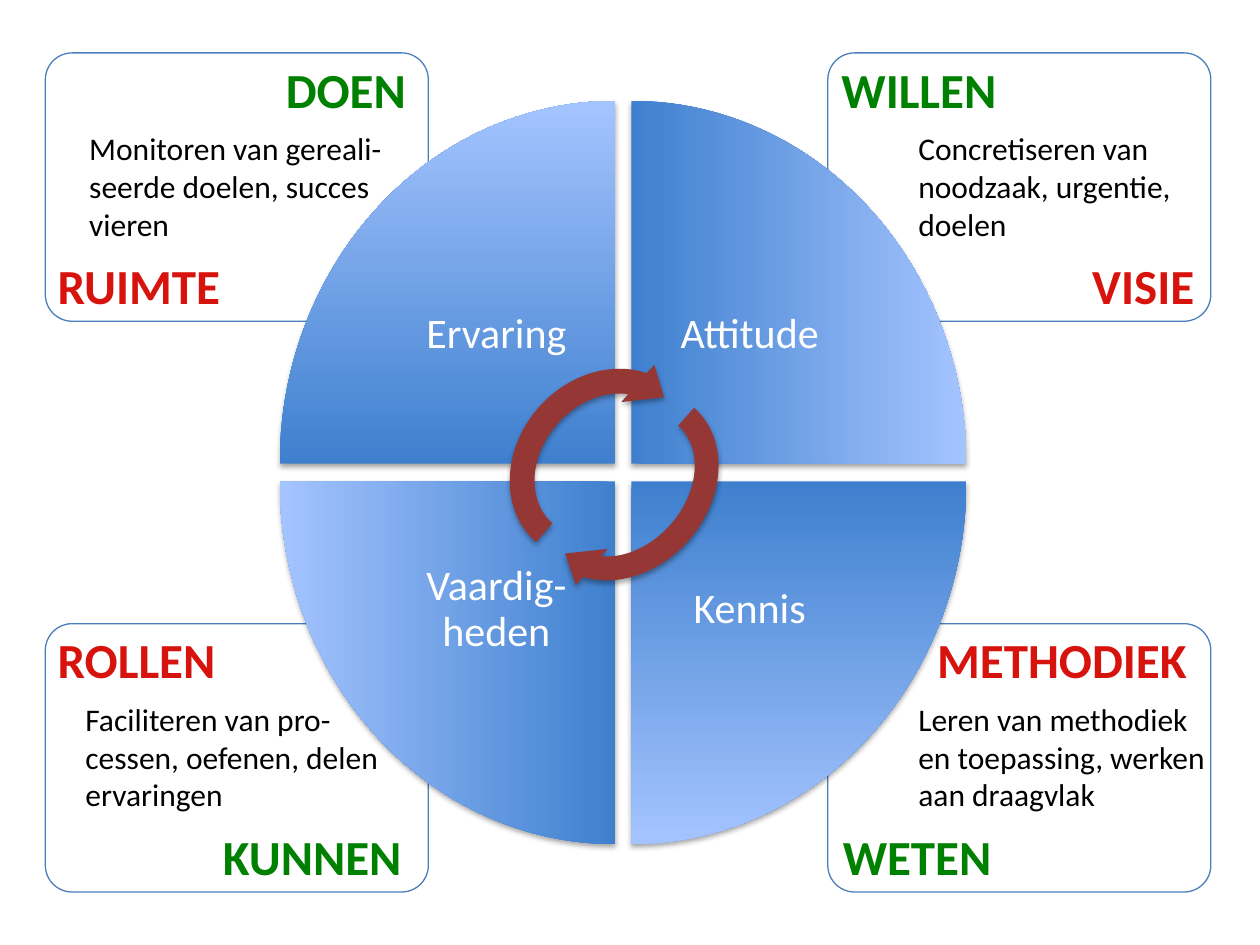
import pptx
import pptx.dml.color
import pptx.enum.shapes
import pptx.enum.text
import pptx.oxml
import pptx.util
from lxml import etree
from pptx.oxml.ns import qn

SHAPE = pptx.enum.shapes.MSO_SHAPE
ALIGN = pptx.enum.text.PP_ALIGN
ANCHOR = pptx.enum.text.MSO_ANCHOR
AUTO = pptx.enum.text.MSO_AUTO_SIZE

GREEN, RED, WHITE, BLACK = "008000", "D7130D", "FFFFFF", "000000"
DARK, LIGHT, OUTLINE, ARROW = "3F80CE", "A4C4FF", "4B7EBC", "953735"

# All lengths are percentages of the slide's width or height.
CARD_W, CARD_H = 30.4, 28.4
CARD_X, CARD_Y = (3.6, 65.7), (5.6, 66)
LABEL_H, BODY_H = 7.6, 13.47
BODY_DY = 7.4
WEDGE_W, WEDGE_H = 26.6, 38.4
WEDGE_X, WEDGE_Y = (22.2, 50.1), (10.67, 50.93)
CAPTION_W, CAPTION_H = 18.8, 27.2

# (column, row), upper label, lower label, body; each as (text, dx, width)
CARDS = [
    ((0, 0), ("DOEN", 18.1, 13.4, GREEN), ("RUIMTE", 0, 16.4, RED),
     ("Monitoren van gereali-\nseerde doelen, succes\nvieren", 2.5, 26.8)),
    ((0, 1), ("ROLLEN", 0, 16.6, RED), ("KUNNEN", 13.1, 18.6, GREEN),
     ("Faciliteren van pro-\ncessen, oefenen, delen\nervaringen", 2.2, 26.7)),
    ((1, 1), ("METHODIEK", 7.7, 24.7, RED), ("WETEN", 0.2, 15.1, GREEN),
     ("Leren van methodiek\nen toepassing, werken\naan draagvlak", 6.2, 26.2)),
    ((1, 0), ("WILLEN", 0.1, 16.2, GREEN), ("VISIE", 20, 11.2, RED),
     ("Concretiseren van\nnoodzaak, urgentie,\ndoelen", 6.2, 23.6)),
]
# Clockwise from the upper left; each wedge is turned a quarter further.
WEDGES = [("Ervaring", 0, 0), ("Attitude", 1, 0), ("Kennis", 1, 1), ("Vaardig-heden", 0, 1)]
ARROWS = [((40.5, 41.2, 18.3, 20.27), 131.5), ((38.8, 38.67, 18.3, 21.07), 311.5)]

prs = pptx.Presentation()
prs.slide_width, prs.slide_height = pptx.util.Inches(10), pptx.util.Inches(7.5)


def rgb(value):
    return pptx.dml.color.RGBColor.from_string(value)


def area(x, y, w, h):
    """Percentages of the slide to lengths."""
    across, down = prs.slide_width / 100, prs.slide_height / 100
    return [round(v) for v in (x * across, y * down, w * across, h * down)]


def add_text(s, box, text, size, color, bold=False):
    tb = s.shapes.add_textbox(*area(*box))
    tf = tb.text_frame
    tf.text = text
    tf.word_wrap = False
    tf.auto_size = AUTO.SHAPE_TO_FIT_TEXT
    for p in tf.paragraphs:
        for r in p.runs:
            r.font.name, r.font.size, r.font.bold = "Calibri", pptx.util.Pt(size), bold
            r.font.color.rgb = rgb(color)
    return tf


def add_shadow(sp):
    sp.shadow.inherit = False
    effects = sp._element.spPr.find(qn("a:effectLst"))
    outer = etree.SubElement(effects, qn("a:outerShdw"), blurRad="40000", dist="23000",
                             dir="5400000", rotWithShape="0")
    color = etree.SubElement(outer, qn("a:srgbClr"), val=BLACK)
    etree.SubElement(color, qn("a:alpha"), val="35000")


def add_card(s, x, y, upper, lower):
    sp = s.shapes.add_shape(SHAPE.ROUNDED_RECTANGLE, *area(x, y, CARD_W, CARD_H))
    sp.adjustments[0] = 0.1
    sp.shadow.inherit = False
    sp.fill.solid()
    sp.fill.fore_color.rgb = rgb(WHITE)
    color = sp._element.spPr.find(qn("a:solidFill"))[0]
    etree.SubElement(color, qn("a:alpha"), val="90000")
    sp.line.color.rgb = rgb(OUTLINE)
    sp.line.width = pptx.util.Pt(0.75)
    for (text, dx, w, ink), top in ((upper, y), (lower, y + CARD_H - LABEL_H)):
        add_text(s, (x + dx, top, w, LABEL_H), text, 28, ink, True)


def add_wedge(s, x, y, turns):
    left, top, w, h = area(x, y, WEDGE_W, WEDGE_H)
    if turns % 2:  # a quarter turn swaps the sides around the same centre
        left, top, w, h = left + (w - h) // 2, top + (h - w) // 2, h, w
    sp = s.shapes.add_shape(SHAPE.PIE_WEDGE, left, top, w, h)
    sp.rotation = 90 * turns
    sp.fill.gradient()
    sp.fill.gradient_angle = 90
    for stop, color in zip(sp.fill.gradient_stops, (DARK, LIGHT)):
        stop.color.rgb = rgb(color)
    sp.line.fill.background()
    add_shadow(sp)


def add_caption(s, x, y, col, row, text):
    """Caption in the inner corner of the wedge at x, y."""
    box = (x if col else x + WEDGE_W - CAPTION_W,
           y if row else y + WEDGE_H - CAPTION_H, CAPTION_W, CAPTION_H)
    tf = add_text(s, box, text, 24, WHITE)
    tf.word_wrap, tf.auto_size = True, AUTO.NONE
    tf.vertical_anchor = ANCHOR.MIDDLE
    tf.margin_left = tf.margin_right = pptx.util.Inches(0.19)
    tf.margin_top = tf.margin_bottom = pptx.util.Inches(0.19)
    tf.paragraphs[0].alignment = ALIGN.CENTER
    tf.paragraphs[0].line_spacing = 0.9


def add_cycle_arrow(s, box, rotation):
    sp = s.shapes.add_shape(SHAPE.CIRCULAR_ARROW, *area(*box))
    sp.rotation = rotation
    sp.fill.solid()
    sp.fill.fore_color.rgb = rgb(ARROW)
    sp.line.fill.background()
    add_shadow(sp)


def main():
    s = prs.slides.add_slide(prs.slide_layouts[6])
    for (col, row), upper, lower, _ in CARDS:
        add_card(s, CARD_X[col], CARD_Y[row], upper, lower)
    for turns, (text, col, row) in enumerate(WEDGES):
        add_wedge(s, WEDGE_X[col], WEDGE_Y[row], turns)
        add_caption(s, WEDGE_X[col], WEDGE_Y[row], col, row, text)
    for box, rotation in ARROWS:
        add_cycle_arrow(s, box, rotation)
    for (col, row), _, _, (text, dx, w) in CARDS:
        add_text(s, (CARD_X[col] + dx, CARD_Y[row] + BODY_DY, w, BODY_H), text, 18, BLACK)
    prs.save("out.pptx")


if __name__ == "__main__":
    main()
